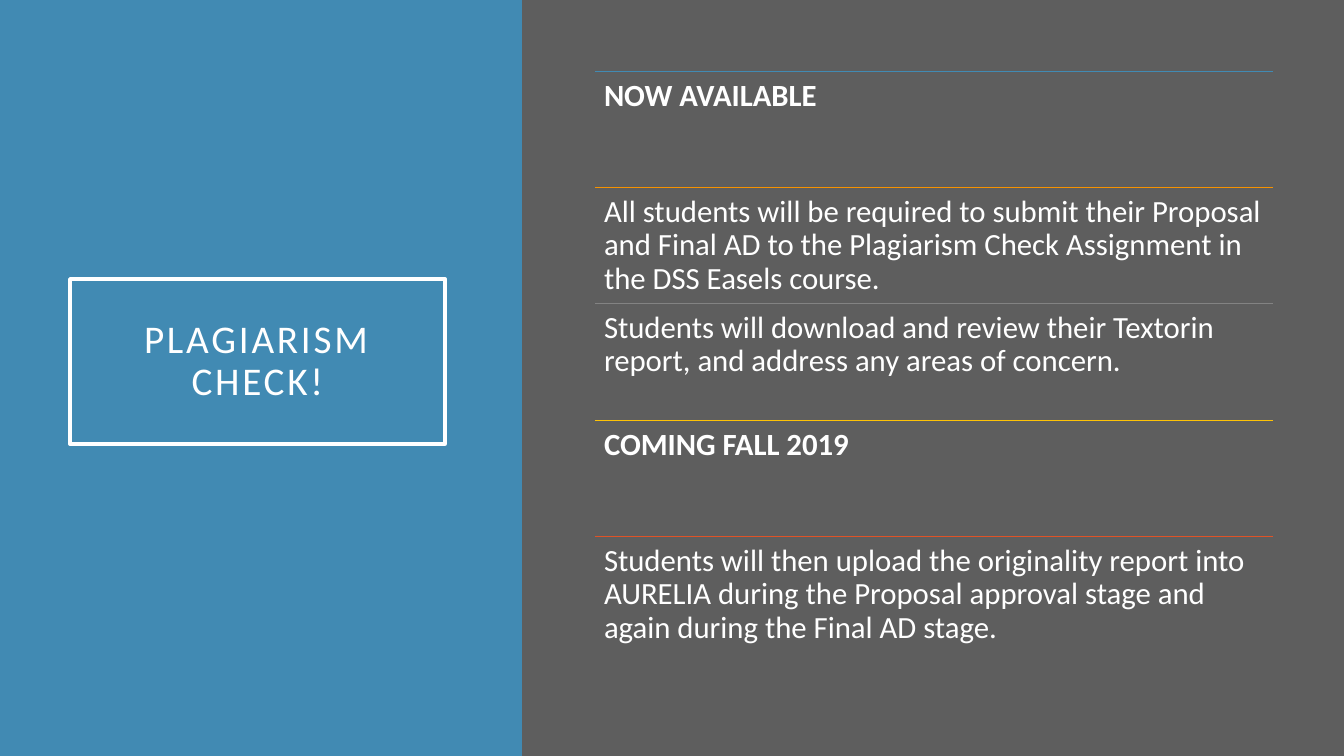
from dataclasses import dataclass

from pptx import Presentation
from pptx import util as u
from pptx.dml.color import RGBColor
from pptx.enum import shapes, text
from pptx.oxml.ns import qn

SCALE = 914400 / 100.8
WIDTH, HEIGHT = 1344, 756
LEFT, TOP, SPAN, LIST_H = 595, 71, 678, 582
INK = {
    "blue": "418AB3",
    "orange": "F69200",
    "grey": "838383",
    "yellow": "FEC306",
    "red": "DF5327",
    "dark": "5E5E5E",
    "white": "FFFFFF",
}


@dataclass
class Item:
    words: str
    rule: str
    bold: bool = False


ITEMS = [
    Item("NOW AVAILABLE", "blue", True),
    Item("All students will be required to submit their Proposal and Final AD "
         "to the Plagiarism Check Assignment in the DSS Easels course.", "orange"),
    Item("Students will download and review their Textorin report, "
         "and address any areas of concern.", "grey"),
    Item("COMING FALL 2019", "yellow", True),
    Item("Students will then upload the originality report into AURELIA during "
         "the Proposal approval stage and again during the Final AD stage.", "red"),
]


def px(n: int) -> int:
    return u.Emu(round(n * SCALE))


def rgb(name: str) -> RGBColor:
    return RGBColor.from_string(INK[name])


def write(shape, words: str, *, size: int, pad: int, bold: bool = False,
          align=text.PP_ALIGN.LEFT, anchor=text.MSO_ANCHOR.TOP,
          track: int = 0) -> None:
    """Fill a shape with one white paragraph; track is in points."""
    frame = shape.text_frame
    frame.word_wrap = True
    frame.auto_size = text.MSO_AUTO_SIZE.NONE
    frame.vertical_anchor = anchor
    frame.margin_left = frame.margin_right = px(pad)
    frame.margin_top = frame.margin_bottom = px(pad)
    para = frame.paragraphs[0]
    para.alignment = align
    para.line_spacing = 0.9
    run = para.add_run()
    run.text = words
    font = run.font
    font.name, font.size, font.bold = "Calibri", u.Pt(size), bold
    font.color.rgb = rgb("white")
    if track:
        font._element.set("spc", str(track * 100))


def add_panel(slide, left: int, width: int, fill: str):
    panel = slide.shapes.add_shape(
        shapes.MSO_SHAPE.RECTANGLE, px(left), 0, px(width), px(HEIGHT))
    panel.shadow.inherit = False
    panel.fill.solid()
    panel.fill.fore_color.rgb = rgb(fill)
    panel.line.fill.background()
    return panel


def add_title(slide) -> None:
    title = slide.shapes.title
    title.left, title.top = px(70), px(279)
    title.width, title.height = px(375), px(165)
    title.line.color.rgb = rgb("white")
    title.line.width = u.Pt(2.5)
    write(title, "PLAGIARISM CHECK!", size=28, pad=20, track=2,
          align=text.PP_ALIGN.CENTER, anchor=text.MSO_ANCHOR.MIDDLE)


def add_item(slide, item: Item, top: int, height: int) -> None:
    rule = slide.shapes.add_connector(
        shapes.MSO_CONNECTOR.STRAIGHT,
        px(LEFT), px(top), px(LEFT + SPAN), px(top))
    rule.line.color.rgb = rgb(item.rule)
    rule.line.width = u.Pt(0.5)
    props = rule._element.spPr
    props.append(props.makeelement(qn("a:effectLst"), {}))
    box = slide.shapes.add_textbox(px(LEFT), px(top), px(SPAN), px(height))
    write(box, item.words, size=22, pad=9, bold=item.bold)


def main() -> None:
    deck = Presentation()
    deck.slide_width, deck.slide_height = px(WIDTH), px(HEIGHT)
    slide = deck.slides.add_slide(deck.slide_layouts[5])
    back = slide.background.fill
    back.solid()
    back.fore_color.rgb = rgb("dark")

    side = add_panel(slide, 0, 522, "blue")
    add_title(slide)
    slide.shapes.title._element.addprevious(side._element)
    add_panel(slide, 524, WIDTH - 524, "dark")
    count = len(ITEMS)
    for i, item in enumerate(ITEMS):
        add_item(slide, item, TOP + LIST_H * i // count, LIST_H // count)
    deck.save("out.pptx")


if __name__ == "__main__":
    main()
